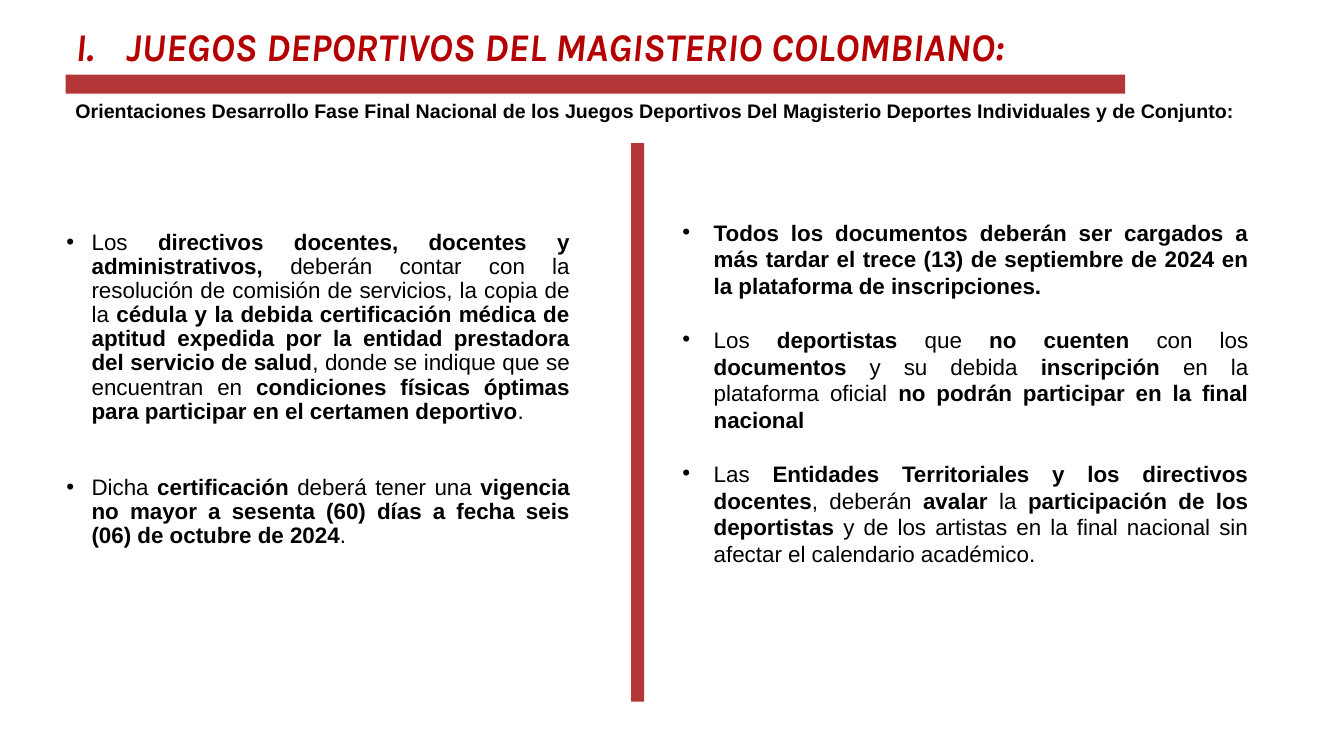
from dataclasses import dataclass

from lxml.etree import SubElement
from pptx import Presentation
from pptx.dml.color import RGBColor
from pptx.enum.shapes import MSO_SHAPE as Shape
from pptx.enum.text import MSO_AUTO_SIZE as AutoSize, PP_ALIGN as Align
from pptx.oxml.ns import qn
from pptx.slide import Slide
from pptx.util import Inches, Pt

TITLE_RED = RGBColor(0xB4, 0x00, 0x00)
BAR_RED = RGBColor(0xB4, 0x37, 0x37)
BLACK = RGBColor(0x00, 0x00, 0x00)


@dataclass(frozen=True)
class Area:
    left: float
    top: float
    width: float
    height: float

    def lengths(self) -> list[int]:
        return [Inches(n) for n in (self.left, self.top, self.width, self.height)]


@dataclass(frozen=True)
class Heading:
    area: Area
    text: str
    font: dict
    wrap: bool


@dataclass(frozen=True)
class Column:
    area: Area
    indent: float
    fit: AutoSize
    spacing: float
    gap: float
    items: tuple[str, ...]


BARS = (Area(0.65, 0.74, 10.51, 0.19), Area(6.26, 1.42, 0.13, 5.54))

HEADINGS = (
    Heading(
        Area(0.65, 0.17, 11.56, 0.57),
        "I.\tJUEGOS DEPORTIVOS DEL MAGISTERIO COLOMBIANO:",
        {"name": "Karla", "size": Pt(28), "bold": True, "italic": True, "color": TITLE_RED},
        True,
    ),
    Heading(
        Area(0.65, 0.93, 11.74, 0.34),
        "Orientaciones Desarrollo Fase Final Nacional de los Juegos Deportivos "
        "Del Magisterio Deportes Individuales y de Conjunto:",
        {"name": "Arial", "size": Pt(14), "bold": True, "color": BLACK},
        False,
    ),
)

COLUMNS = (
    Column(
        Area(0.56, 2.24, 5.19, 3.8), 0.25, AutoSize.NONE, 0.9, 37,
        (
            "Los **directivos docentes, docentes y administrativos,** deberán contar con la "
            "resolución de comisión de servicios, la copia de la **cédula y la debida "
            "certificación médica de aptitud expedida por la entidad prestadora del servicio "
            "de salud**, donde se indique que se encuentran en **condiciones físicas óptimas "
            "para participar en el certamen deportivo**.",
            "Dicha **certificación** deberá tener una **vigencia no mayor a sesenta (60) días "
            "a fecha seis (06) de octubre de 2024**.",
        ),
    ),
    Column(
        Area(6.67, 2.12, 5.81, 4.14), 0.31, AutoSize.SHAPE_TO_FIT_TEXT, 1.0, 19,
        (
            "**Todos los documentos deberán ser cargados a más tardar el trece (13) de "
            "septiembre de 2024 en la plataforma de inscripciones.**",
            "Los** deportistas **que** no cuenten** con los **documentos** y su debida "
            "**inscripción** en la plataforma oficial **no podrán participar en la final "
            "nacional**",
            "Las **Entidades Territoriales y los directivos docentes**, deberán **avalar** la "
            "**participación de los deportistas **y de los artistas en la final nacional sin "
            "afectar el calendario académico.",
        ),
    ),
)


def apply_font(font, values: dict) -> None:
    for key, value in values.items():
        if key == "color":
            font.color.rgb = value
        else:
            setattr(font, key, value)


def draw_bar(slide: Slide, area: Area) -> None:
    bar = slide.shapes.add_shape(Shape.RECTANGLE, *area.lengths())
    bar.shadow.inherit = False
    bar.fill.solid()
    bar.fill.fore_color.rgb = BAR_RED
    bar.line.fill.background()


def draw_heading(slide: Slide, heading: Heading) -> None:
    frame = slide.shapes.add_textbox(*heading.area.lengths()).text_frame
    frame.word_wrap = heading.wrap
    frame.auto_size = AutoSize.SHAPE_TO_FIT_TEXT
    run = frame.paragraphs[0].add_run()
    run.text = heading.text
    apply_font(run.font, heading.font)


def add_bullet(paragraph, indent: float) -> None:
    properties = paragraph._p.get_or_add_pPr()
    properties.set("marL", str(Inches(indent)))
    properties.set("indent", str(-Inches(indent)))
    SubElement(properties, qn("a:buFont")).set("typeface", "Arial")
    SubElement(properties, qn("a:buChar")).set("char", "•")


def draw_column(slide: Slide, column: Column) -> None:
    frame = slide.shapes.add_textbox(*column.area.lengths()).text_frame
    frame.word_wrap = True
    frame.auto_size = column.fit
    for number, item in enumerate(column.items):
        paragraph = frame.add_paragraph() if number else frame.paragraphs[0]
        add_bullet(paragraph, column.indent)
        layout = {
            "alignment": Align.JUSTIFY,
            "line_spacing": column.spacing,
            "space_before": Pt(column.gap if number else 0),
        }
        for key, value in layout.items():
            setattr(paragraph, key, value)
        for position, words in enumerate(item.split("**")):
            if words:
                run = paragraph.add_run()
                run.text = words
                style = {"name": "Arial", "size": Pt(16), "bold": position % 2 == 1, "color": BLACK}
                apply_font(run.font, style)


def main() -> None:
    deck = Presentation()
    deck.slide_width, deck.slide_height = Inches(13.33), Inches(7.5)
    slide = deck.slides.add_slide(deck.slide_layouts[6])
    for heading in HEADINGS:
        draw_heading(slide, heading)
    for column in COLUMNS:
        draw_column(slide, column)
    for area in BARS:
        draw_bar(slide, area)
    deck.save("out.pptx")


if __name__ == "__main__":
    main()
